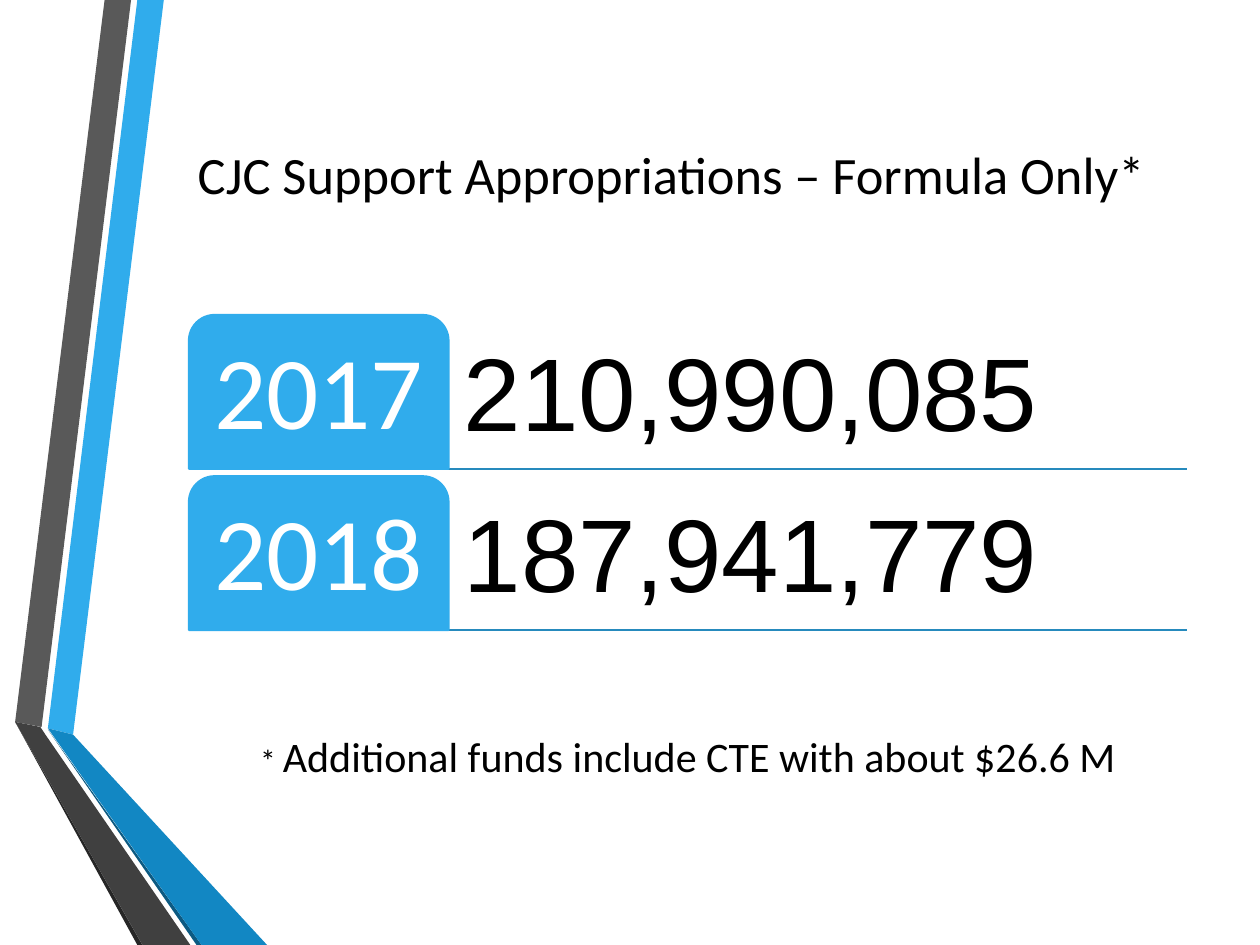
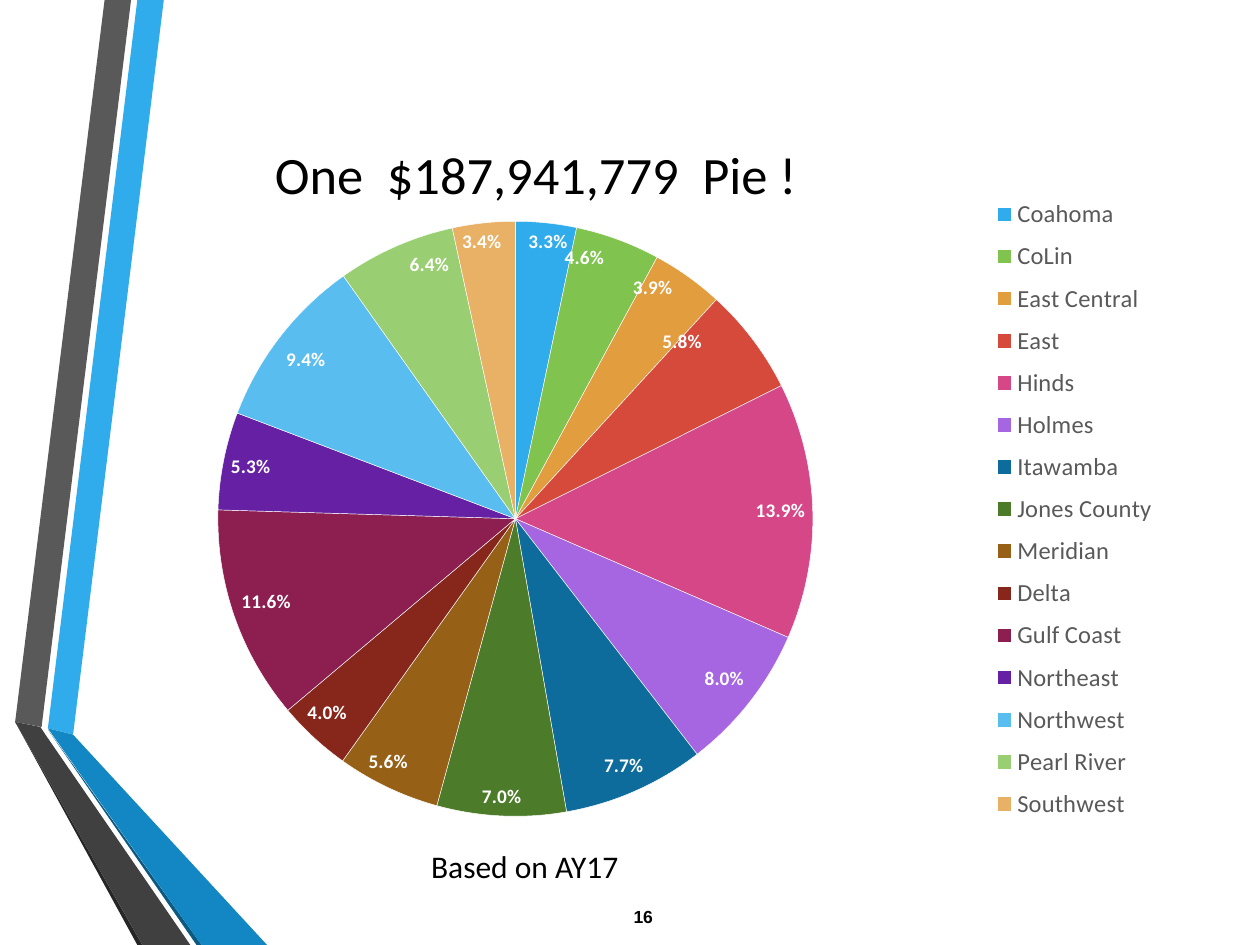
from dataclasses import dataclass

from lxml import etree
from pptx import Presentation
from pptx import util as u
from pptx.chart.data import CategoryChartData
from pptx.dml.color import RGBColor
from pptx.enum import chart as ch
from pptx.enum import shapes, text
from pptx.oxml.ns import qn

BLUE = RGBColor(0x30, 0xAC, 0xEC)
DEEP = RGBColor(0x12, 0x87, 0xC3)
NAVY = RGBColor(0x0C, 0x5A, 0x82)
RULE = RGBColor(0x26, 0x8A, 0xBD)
GREY = RGBColor(0x59, 0x59, 0x59)
DARK = RGBColor(0x40, 0x40, 0x40)
COAL = RGBColor(0x26, 0x26, 0x26)
BLACK = RGBColor(0, 0, 0)
WHITE = RGBColor(0xFF, 0xFF, 0xFF)
SANS, ARIAL = "Calibri", "Arial"
MID, LOW, TOP = text.MSO_ANCHOR.MIDDLE, text.MSO_ANCHOR.BOTTOM, text.MSO_ANCHOR.TOP


@dataclass
class Box:
    left: float
    top: float
    width: float
    height: float

    def emu(self) -> list:
        return [u.Inches(v) for v in (self.left, self.top, self.width, self.height)]


@dataclass
class Style:
    size: float
    face: str = SANS
    color: RGBColor = BLACK
    bold: bool = False
    anchor: text.MSO_ANCHOR = TOP
    align: text.PP_ALIGN = text.PP_ALIGN.CENTER
    inset: float = 0
    lines: float = 1


@dataclass
class Band:
    color: RGBColor
    pts: list


@dataclass
class Year:
    name: str
    sum: str


@dataclass
class Slice:
    name: str
    share: float
    color: str
    shift: tuple = ()


TITLE = Style(30, anchor=MID)
NOTE = Style(24)
BASIS = Style(18)
PAGE = Style(10, ARIAL, bold=True)
SUM = Style(59, ARIAL, anchor=LOW, align=text.PP_ALIGN.LEFT, inset=0.12, lines=0.9)
YEAR = Style(59, color=WHITE, anchor=MID, inset=0.12, lines=0.9)

BANDS = [
    Band(BLUE, [(0.38, 5.78), (0.58, 5.83), (1.3, 0), (1.09, 0)]),
    Band(GREY, [(1.04, 0), (0.83, 0), (0.12, 5.73), (0.33, 5.77)]),
    Band(COAL, [(0.12, 5.73), (1.09, 7.5), (1.13, 7.5)]),
    Band(NAVY, [(0.38, 5.79), (1.56, 7.5), (1.6, 7.5)]),
    Band(DEEP, [(0.38, 5.78), (1.6, 7.5), (2.12, 7.5), (0.58, 5.83)]),
    Band(DARK, [(1.51, 7.5), (0.36, 5.83), (0.32, 5.77), (0.12, 5.73), (1.13, 7.5)]),
]
YEARS = [Year("2017", "210,990,085"), Year("2018", "187,941,779")]
# Shift moves a label, as a share of the chart's width and height
SLICES = [
    Slice("Coahoma", 0.033, "30ACEC", (0.02, 0)),
    Slice("CoLin", 0.046, "80C34F", (-0.01, 0)),
    Slice("East Central", 0.039, "E29D3E", (-0.01, -0.01)),
    Slice("East", 0.058, "D64A3B", (-0.04, -0.02)),
    Slice("Hinds", 0.139, "D64787"),
    Slice("Holmes", 0.08, "A666E1", (0, -0.01)),
    Slice("Itawamba", 0.077, "0E6C9C", (0.01, -0.01)),
    Slice("Jones County", 0.07, "4C7B2A"),
    Slice("Meridian", 0.056, "966117", (-0.02, -0.01)),
    Slice("Delta", 0.04, "87271C", (-0.01, -0.01)),
    Slice("Gulf Coast", 0.116, "8C1F50"),
    Slice("Northeast", 0.053, "6520A4", (0, -0.01)),
    Slice("Northwest", 0.094, "59BDF0", (0, 0.01)),
    Slice("Pearl River", 0.064, "99CF72", (0.01, 0)),
    Slice("Southwest", 0.034, "E8B165", (-0.02, 0)),
]


def set_font(font, style: Style) -> None:
    font.size, font.name, font.bold = u.Pt(style.size), style.face, style.bold
    font.color.rgb = style.color


def add_text(slide, box: Box, words: list, style: Style):
    frame = slide.shapes.add_textbox(*box.emu()).text_frame
    frame.word_wrap = True
    frame.vertical_anchor = style.anchor
    if style.inset:
        frame.margin_left = frame.margin_right = u.Inches(style.inset)
        frame.margin_top = frame.margin_bottom = u.Inches(style.inset)
    para = frame.paragraphs[0]
    para.alignment, para.line_spacing = style.align, style.lines
    for word in words:
        run = para.add_run()
        run.text = word
        set_font(run.font, style)
    return para


def add_bands(slide) -> None:
    for band in BANDS:
        pts = [(u.Inches(x), u.Inches(y)) for x, y in band.pts]
        form = slide.shapes.build_freeform(*pts[0])
        form.add_line_segments(pts[1:], close=True)
        shape = form.convert_to_shape()
        shape.shadow.inherit = False
        shape.fill.solid()
        shape.fill.fore_color.rgb = band.color
        shape.line.fill.background()


def new_slide(deck, title: str, box: Box):
    slide = deck.slides.add_slide(deck.slide_layouts[6])
    add_bands(slide)
    add_text(slide, box, [title], TITLE)
    return slide


def add_year(slide, year: Year, top: float) -> None:
    left, right, tab, high = 1.5, 9.42, 2.06, 1.22
    # Rule under the row
    ends = [u.Inches(v) for v in (left, top + high, right, top + high)]
    rule = slide.shapes.add_connector(shapes.MSO_CONNECTOR.STRAIGHT, *ends)
    rule.line.color.rgb, rule.line.width = RULE, u.Pt(1.25)
    etree.SubElement(rule.element.spPr, qn("a:effectLst"))
    # Sum and tab
    add_text(slide, Box(left + tab, top, right - left - tab, high), [year.sum], SUM)
    kind = shapes.MSO_SHAPE.ROUND_2_SAME_RECTANGLE
    shape = slide.shapes.add_shape(kind, *Box(left, top, tab, high).emu())
    shape.adjustments[0], shape.adjustments[1] = 0.167, 0
    shape.shadow.inherit = False
    shape.fill.solid()
    shape.fill.fore_color.rgb = shape.line.color.rgb = BLUE
    shape.line.width = u.Pt(1.25)
    add_text(slide, Box(left + 0.06, top + 0.06, tab - 0.12, high - 0.06),
             [year.name], YEAR)


def put_layout(host, at: int, inner: bool = False, **vals: float) -> None:
    """Give a chart part a manual place, in shares of the chart."""
    for old in host.findall(qn("c:layout")):
        host.remove(old)
    node = etree.Element(qn("c:layout"))
    host.insert(at, node)
    man = etree.SubElement(node, qn("c:manualLayout"))
    if inner:
        etree.SubElement(man, qn("c:layoutTarget")).set("val", "inner")
    if "w" in vals:
        for key in ("xMode", "yMode"):
            etree.SubElement(man, qn(f"c:{key}")).set("val", "edge")
    for key, val in vals.items():
        etree.SubElement(man, qn(f"c:{key}")).set("val", str(val))


def add_pie(slide, box: Box) -> None:
    data = CategoryChartData(number_format="0.0%")
    data.categories = [s.name for s in SLICES]
    data.add_series("Series 1", [s.share for s in SLICES])
    kind = ch.XL_CHART_TYPE.PIE
    chart = slide.shapes.add_chart(kind, *box.emu(), data).chart
    chart.has_title = False
    set_font(chart.font, Style(10))
    plot = chart.plots[0]
    plot.vary_by_categories = True
    row = plot.series[0]

    # Labels
    style = Style(11, color=WHITE, bold=True)
    tags = row.data_labels
    tags.show_value = True
    tags.number_format, tags.number_format_is_linked = "0.0%", False
    tags.position = ch.XL_LABEL_POSITION.INSIDE_END
    set_font(tags.font, style)

    # Slices
    for i, part in enumerate(SLICES):
        point = row.points[i]
        point.format.fill.solid()
        point.format.fill.fore_color.rgb = RGBColor.from_string(part.color)
        point.format.line.color.rgb = WHITE
        point.format.line.width = u.Pt(0.25)
        if part.shift:
            set_font(point.data_label.font, style)
            point.data_label.position = ch.XL_LABEL_POSITION.INSIDE_END
            tag = chart.element.xpath(f'.//c:dLbl[c:idx/@val="{i}"]')[0]
            put_layout(tag, 1, x=part.shift[0], y=part.shift[1])
            form = etree.Element(qn("c:numFmt"), formatCode="0.0%", sourceLinked="0")
            tag.insert(2, form)

    # Legend and plot area
    chart.has_legend = True
    chart.legend.position = ch.XL_LEGEND_POSITION.RIGHT
    chart.legend.include_in_layout = False
    set_font(chart.legend.font, Style(14, color=GREY))
    area = chart.element.xpath(".//c:plotArea")[0]
    put_layout(area, 0, inner=True, x=0.147, y=0.07, w=0.53, h=0.878)
    put_layout(chart.element.xpath(".//c:legend")[0], 1, x=0.83, y=0.02, w=0.16, h=0.95)


def main() -> None:
    deck = Presentation()
    deck.slide_width, deck.slide_height = u.Inches(10), u.Inches(7.5)

    # Appropriations by year
    slide = new_slide(deck, "CJC Support Appropriations – Formula Only*",
                      Box(1.22, 0.75, 8.22, 1.25))
    for i, year in enumerate(YEARS):
        add_year(slide, year, 2.5 + 1.28 * i)
    note = add_text(slide, Box(1.5, 5.75, 7.92, 0.5),
                    ["* ", "Additional funds include CTE with about $26.6 M"], NOTE)
    note.runs[0].font.size = u.Pt(18)

    # Shares by college
    slide = new_slide(deck, "One  $187,941,779  Pie !", Box(1.18, 0.75, 6.15, 1.25))
    add_text(slide, Box(4.48, 7.14, 1.25, 0.36), ["16"], PAGE)
    add_pie(slide, Box(0.42, 1.38, 8.91, 5.38))
    add_text(slide, Box(1, 6.67, 6.33, 0.4), ["Based on AY17"], BASIS)

    deck.save("out.pptx")


if __name__ == "__main__":
    main()
